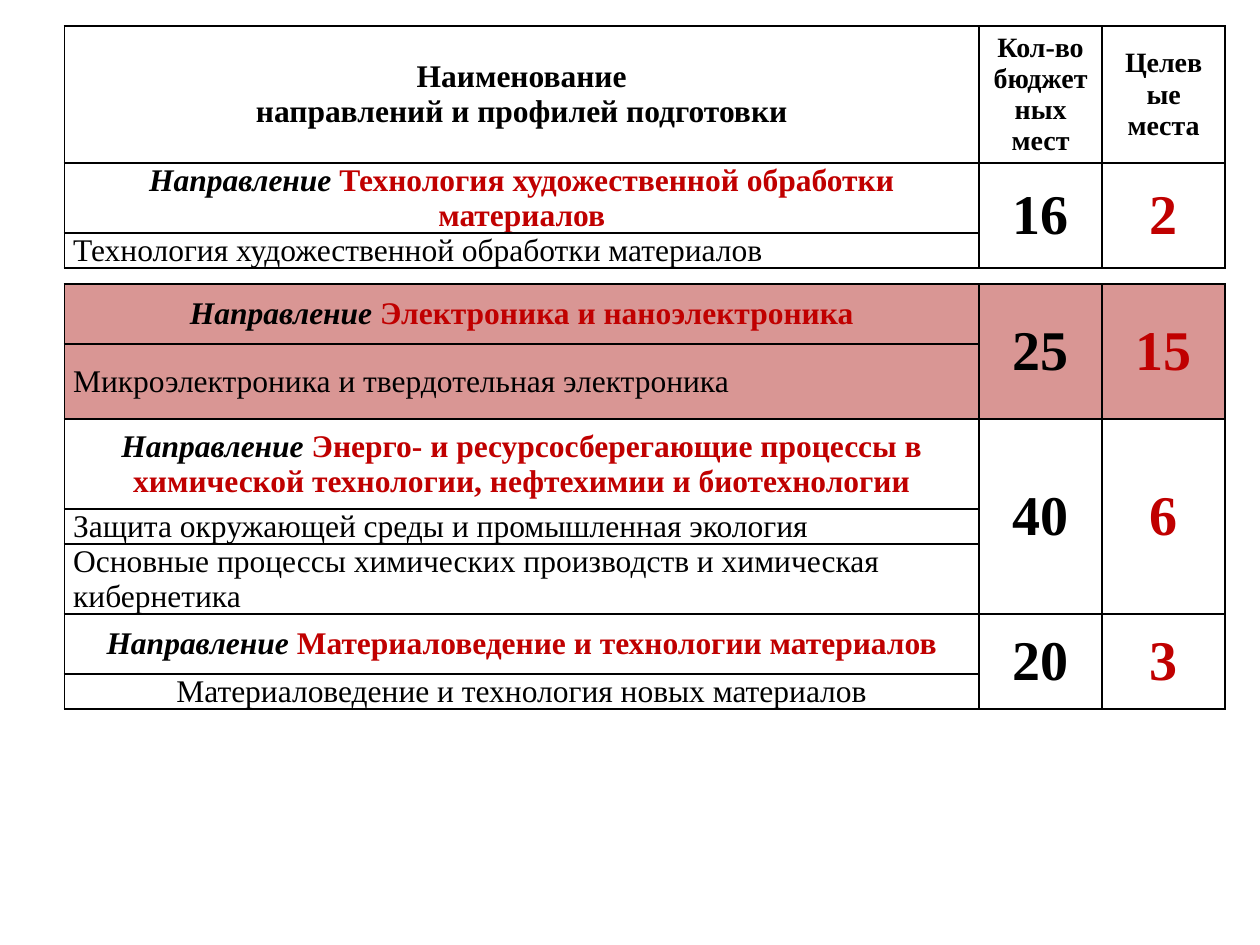
from dataclasses import dataclass

from lxml import etree
from pptx import Presentation
from pptx.dml.color import RGBColor
from pptx.enum.text import MSO_ANCHOR, PP_ALIGN
from pptx.oxml.ns import qn
from pptx.util import Pt

LEFT, CENTER, JUSTIFY = PP_ALIGN.LEFT, PP_ALIGN.CENTER, PP_ALIGN.JUSTIFY
MIDDLE = MSO_ANCHOR.MIDDLE


@dataclass(frozen=True)
class Theme:
    font: str = "Times New Roman"
    black: str = "000000"
    red: str = "C00000"
    pink: str = "D99694"
    body_size: int = 18
    header_size: int = 16
    number_size: int = 32
    border_width: int = 1


THEME = Theme()
TABLE_LEFT = 36.8
COLUMN_WIDTHS = (522.7, 70.3, 70.3)


def add_run(paragraph, text, *, size=THEME.body_size, color=THEME.black,
            bold=False, italic=False, align=CENTER):
    paragraph.alignment = align
    run = paragraph.add_run()
    run.text = text
    run.font.name = THEME.font
    run.font.size = Pt(size)
    run.font.bold = bold
    run.font.italic = italic
    run.font.color.rgb = RGBColor.from_string(color)


def format_cell(cell, fill):
    cell.vertical_anchor = MIDDLE
    properties = cell._tc.get_or_add_tcPr()
    for side in ("a:lnL", "a:lnR", "a:lnT", "a:lnB"):
        line = etree.SubElement(properties, qn(side), w=str(Pt(THEME.border_width)))
        solid = etree.SubElement(line, qn("a:solidFill"))
        etree.SubElement(solid, qn("a:srgbClr"), val=THEME.black)
    if fill:
        cell.fill.solid()
        cell.fill.fore_color.rgb = RGBColor.from_string(fill)
    else:
        cell.fill.background()


# Each group: budget places, target places, fill, (height, direction name),
# then its profiles as (height, name, alignment)
TABLES = [
    {"top": 14.9, "header_height": 78.3, "groups": [
        ("16", "2", None, (40, "Технология художественной обработки материалов"),
         [(20, "Технология художественной обработки материалов", JUSTIFY)]),
    ]},
    {"top": 162.3, "header_height": None, "groups": [
        ("25", "15", THEME.pink, (34.3, "Электроника и наноэлектроника"),
         [(42.9, "Микроэлектроника и твердотельная электроника", JUSTIFY)]),
        ("40", "6", None,
         (51.4, "Энерго- и ресурсосберегающие процессы в химической технологии, "
                "нефтехимии и биотехнологии"),
         [(20, "Защита окружающей среды и промышленная экология", LEFT),
          (39.8, "Основные процессы химических производств и химическая кибернетика",
           LEFT)]),
        ("20", "3", None, (34.3, "Материаловедение и технологии материалов"),
         [(20, "Материаловедение и технология новых материалов", CENTER)]),
    ]},
]

presentation = Presentation()
presentation.slide_width, presentation.slide_height = Pt(720), Pt(540)
slide = presentation.slides.add_slide(presentation.slide_layouts[6])

for content in TABLES:
    # Row heights and fills, top to bottom
    header_height = content["header_height"]
    rows = [(header_height, None)] if header_height else []
    for _, _, fill, direction, profiles in content["groups"]:
        rows += [(row[0], fill) for row in (direction, *profiles)]

    # Grid
    shape = slide.shapes.add_table(
        len(rows), len(COLUMN_WIDTHS), Pt(TABLE_LEFT), Pt(content["top"]),
        Pt(sum(COLUMN_WIDTHS)), Pt(sum(height for height, _ in rows)))
    table = shape.table
    table.first_row = table.horz_banding = False
    for column, width in zip(table.columns, COLUMN_WIDTHS):
        column.width = Pt(width)
    for row, (height, fill) in zip(table.rows, rows):
        row.height = Pt(height)
        for cell in row.cells:
            format_cell(cell, fill)
        name_cell = row.cells[0]
        name_cell.margin_left = name_cell.margin_right = Pt(5)
        name_cell.margin_top = name_cell.margin_bottom = Pt(0)

    # Header
    row_index = 0
    if header_height:
        frame = table.cell(0, 0).text_frame
        add_run(frame.paragraphs[0], "Наименование", bold=True)
        add_run(frame.add_paragraph(), "направлений и профилей подготовки", bold=True)
        for column_index, text in enumerate(("Кол-во бюджетных мест", "Целевые места"), 1):
            add_run(table.cell(0, column_index).text_frame.paragraphs[0], text,
                    size=THEME.header_size, bold=True)
        row_index = 1

    # Directions with their profiles and merged place counts
    for budget, target, _, (_, direction), profiles in content["groups"]:
        paragraph = table.cell(row_index, 0).text_frame.paragraphs[0]
        add_run(paragraph, "Направление ", bold=True, italic=True)
        add_run(paragraph, direction, color=THEME.red, bold=True)
        last_row = row_index + len(profiles)
        for column_index, number, color in ((1, budget, THEME.black), (2, target, THEME.red)):
            cell = table.cell(row_index, column_index)
            cell.merge(table.cell(last_row, column_index))
            add_run(cell.text_frame.paragraphs[0], number,
                    size=THEME.number_size, color=color, bold=True)
        for profile_row, (_, name, align) in enumerate(profiles, row_index + 1):
            add_run(table.cell(profile_row, 0).text_frame.paragraphs[0], name, align=align)
        row_index = last_row + 1

presentation.save("out.pptx")
